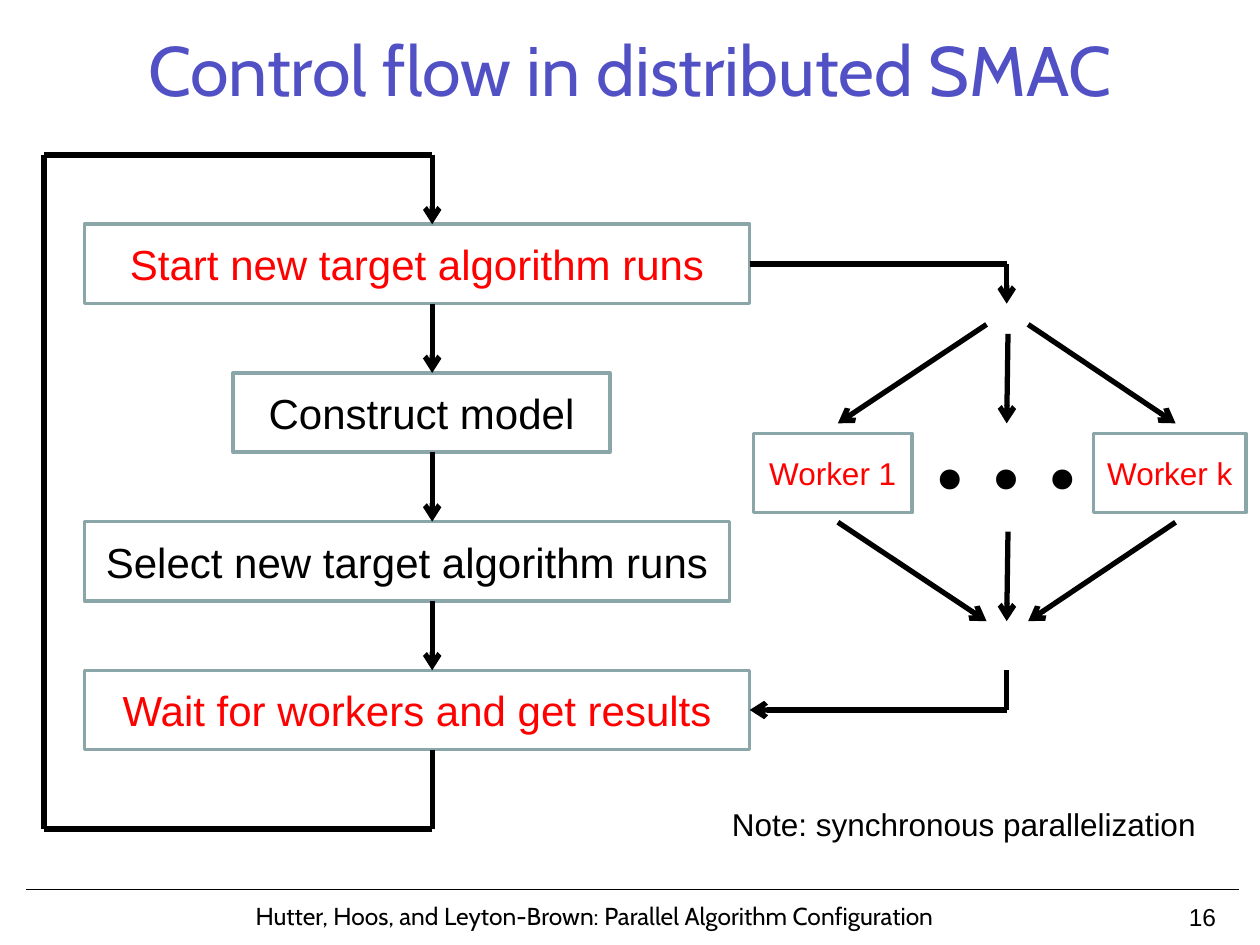
from dataclasses import dataclass
from typing import Optional

from lxml import etree
from pptx import Presentation
from pptx import util as u
from pptx.dml.color import RGBColor
from pptx.enum import shapes, text
from pptx.oxml.ns import qn

# Grid: 100 columns by 75 rows of square cells
presentation = Presentation()
presentation.slide_width, presentation.slide_height = u.Inches(10), u.Inches(7.5)
COLUMN = presentation.slide_width / 100
ROW = presentation.slide_height / 75
slide = presentation.slides.add_slide(presentation.slide_layouts[6])

BLACK, RED, WHITE, BORDER, TITLE = "000000", "FF0000", "FFFFFF", "8AA6A8", "5151C5"
LEFT, CENTER, RIGHT = text.PP_ALIGN.LEFT, text.PP_ALIGN.CENTER, text.PP_ALIGN.RIGHT
TOP, MIDDLE = text.MSO_ANCHOR.TOP, text.MSO_ANCHOR.MIDDLE
RIGHT_SIDE = 3

BOX_HEIGHT = 6.3
FIRST_STEP, STEP_PITCH = 17.8, 11.8
FLOW_X, LOOP_X = 34.3, 3.5
LOOP_TOP, LOOP_BOTTOM = 12.3, 65.8
WORKER_X, WORKER_TOP = 79.9, 34.4


@dataclass
class Box:
    label: str
    left: float
    top: float
    width: float
    color: str
    size: float = 24


@dataclass
class Label:
    label: str
    left: float
    top: float
    width: float
    height: float
    size: float
    font: str = "Arial"
    color: str = BLACK
    align: text.PP_ALIGN = LEFT
    anchor: text.MSO_ANCHOR = TOP
    wrap: bool = True
    space_before: float = 0


@dataclass
class Line:
    x1: float
    y1: float
    x2: float
    y2: float
    arrow: bool = True
    weight: float = 3


def rgb(color: str) -> RGBColor:
    return RGBColor.from_string(color)


def x(columns: float) -> int:
    return round(columns * COLUMN)


def y(rows: float) -> int:
    return round(rows * ROW)


def write(shape, label: str, size: float, font: str, color: str,
          align: text.PP_ALIGN, anchor: text.MSO_ANCHOR) -> None:
    frame = shape.text_frame
    frame.text = label
    frame.vertical_anchor = anchor
    paragraph = frame.paragraphs[0]
    paragraph.alignment = align
    style = paragraph.runs[0].font
    style.size, style.name = u.Pt(size), font
    style.color.rgb = rgb(color)


def draw_box(box: Box):
    shape = slide.shapes.add_shape(shapes.MSO_SHAPE.RECTANGLE, x(box.left), y(box.top),
                                   x(box.width), y(BOX_HEIGHT))
    shape.shadow.inherit = False
    shape.fill.solid()
    shape.fill.fore_color.rgb = rgb(WHITE)
    shape.line.color.rgb = rgb(BORDER)
    shape.line.width = u.Pt(2)
    write(shape, box.label, box.size, "Arial", box.color, CENTER, MIDDLE)
    shape.text_frame.word_wrap = True
    return shape


def draw_label(item: Label) -> None:
    shape = slide.shapes.add_textbox(x(item.left), y(item.top), x(item.width), y(item.height))
    write(shape, item.label, item.size, item.font, item.color, item.align, item.anchor)
    shape.text_frame.word_wrap = item.wrap
    if item.space_before:
        shape.text_frame.paragraphs[0].space_before = u.Pt(item.space_before)


def draw_line(line: Line, start: Optional[object] = None, end: Optional[object] = None) -> None:
    """Draw a straight line, joined to the right side of a start or end box."""
    connector = slide.shapes.add_connector(shapes.MSO_CONNECTOR.STRAIGHT,
                                           x(line.x1), y(line.y1), x(line.x2), y(line.y2))
    if start is not None:
        connector.begin_connect(start, RIGHT_SIDE)
    if end is not None:
        connector.end_connect(end, RIGHT_SIDE)
    connector.line.color.rgb = rgb(BLACK)
    connector.line.width = u.Pt(line.weight)
    if line.arrow:
        etree.SubElement(connector.line._get_or_add_ln(), qn("a:tailEnd"), type="arrow")
    etree.SubElement(connector._element.spPr, qn("a:effectLst"))


def main() -> None:
    # Title and footer
    draw_line(Line(98.3, 70.6, 2.1, 70.6, arrow=False, weight=0.75))
    draw_label(Label("Control flow in distributed SMAC", 2.5, 1.7, 95, 7.5, 40,
                     "Cabin", TITLE, CENTER, MIDDLE))
    draw_label(Label("16", 71.7, 71.1, 25.8, 3.8, 14, align=RIGHT))
    draw_label(Label("Hutter, Hoos, and Leyton-Brown: Parallel Algorithm Configuration",
                     19.3, 71, 59.8, 4, 14, "Cabin"))

    # Main steps, evenly pitched
    steps = [("Start new target algorithm runs", 6.7, 52.8, RED),
             ("Construct model", 18.5, 29.9, BLACK),
             ("Select new target algorithm runs", 6.7, 51.2, BLACK),
             ("Wait for workers and get results", 6.7, 52.8, RED)]
    tops = [FIRST_STEP + STEP_PITCH * index for index in range(len(steps))]
    boxes = [draw_box(Box(label, left, top, width, color))
             for (label, left, width, color), top in zip(steps, tops)]
    for top, next_top in zip(tops, tops[1:]):
        draw_line(Line(FLOW_X, top + BOX_HEIGHT, FLOW_X, next_top))

    # Loop from the last step back to the first
    loop = [(FLOW_X, tops[-1] + BOX_HEIGHT), (FLOW_X, LOOP_BOTTOM), (LOOP_X, LOOP_BOTTOM),
            (LOOP_X, LOOP_TOP), (FLOW_X, LOOP_TOP), (FLOW_X, tops[0])]
    for index, (begin, finish) in enumerate(zip(loop, loop[1:])):
        draw_line(Line(*begin, *finish, arrow=index == len(loop) - 2))

    # Links between the steps and the workers
    start_y, wait_y = tops[0] + BOX_HEIGHT / 2, tops[-1] + BOX_HEIGHT / 2
    draw_line(Line(59.5, start_y, WORKER_X, start_y, arrow=False), start=boxes[0])
    draw_line(Line(WORKER_X, start_y, WORKER_X, tops[0] + BOX_HEIGHT))
    draw_line(Line(WORKER_X, wait_y, WORKER_X, tops[-1], arrow=False))
    draw_line(Line(WORKER_X, wait_y, 59.5, wait_y), end=boxes[-1])

    # Workers with fan-out above and fan-in below
    draw_box(Box("Worker 1", 59.8, WORKER_TOP, 12.6, RED, 18))
    draw_box(Box("Worker k", 86.8, WORKER_TOP, 12.1, RED, 18))
    for inner, outer in ((78.3, 66.5), (81.6, 93.3)):
        draw_line(Line(inner, 25.75, outer, 33.6))
        draw_line(Line(outer, 41.45, inner, 49.3))
    for top in (26.5, 42.2):
        draw_line(Line(80, top, WORKER_X, top + 7.1))
    draw_label(Label("…", 72.2, 24.9, 18, 7, 96, "Times New Roman", space_before=11))

    # Note
    draw_label(Label("Note: synchronous parallelization", 57.1, 63.4, 39.2, 4, 18, wrap=False))

    presentation.save("out.pptx")


if __name__ == "__main__":
    main()
